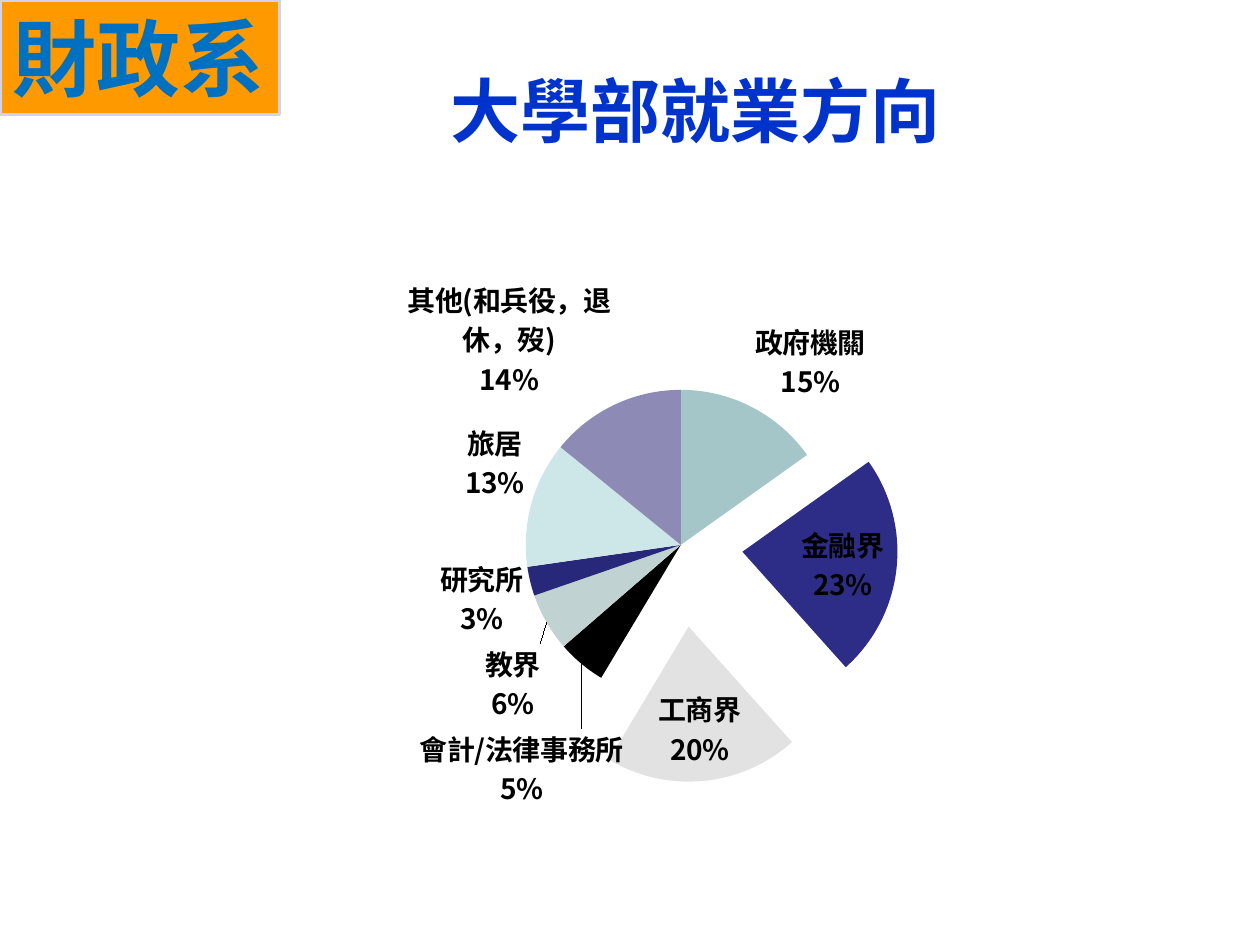
from lxml.etree import SubElement
from pptx import Presentation
from pptx.chart.data import CategoryChartData
from pptx.dml.color import RGBColor
from pptx.enum.chart import XL_CHART_TYPE as ChartType
from pptx.enum.shapes import MSO_SHAPE as Shape
from pptx.enum.text import MSO_ANCHOR as Anchor, MSO_AUTO_SIZE as AutoSize, PP_ALIGN as Align
from pptx.oxml import parse_xml
from pptx.oxml.ns import nsdecls, qn
from pptx.util import Cm, Pt

TITLE_BLUE = RGBColor(0x00, 0x33, 0xCC)
TAG_BLUE = RGBColor(0x00, 0x70, 0xC0)
ORANGE = RGBColor(0xFF, 0x99, 0x00)
LAVENDER = RGBColor(0xD1, 0xD1, 0xF0)
BLACK = RGBColor(0x00, 0x00, 0x00)
CJK_FONT = "Noto Sans CJK SC"

CAREERS = [
    ("政府機關", 15, RGBColor(0xA5, 0xC6, 0xC9)),
    ("金融界", 23, RGBColor(0x2D, 0x2D, 0x87)),
    ("工商界", 20, RGBColor(0xE2, 0xE2, 0xE2)),
    ("會計/法律事務所", 5, BLACK),
    ("教界", 6, RGBColor(0xC1, 0xD2, 0xD3)),
    ("研究所", 3, RGBColor(0x28, 0x28, 0x7A)),
    ("旅居", 13, RGBColor(0xCD, 0xE7, 0xE8)),
    ("其他(和兵役，退休，歿)", 14, RGBColor(0x8D, 0x8B, 0xB5)),
]
EXPLOSIONS = {1: 40, 2: 53}
LABEL_SHIFTS = {3: (0.04, 0.09)}


def format_para(para, text, size, color, font_name):
    para.text = text
    font = para.font
    font.size = Pt(size)
    font.bold = True
    font.color.rgb = color
    font.name = font_name
    defaults = para._p.pPr.find(qn("a:defRPr"))
    SubElement(defaults, qn("a:ea")).set("typeface", CJK_FONT)


deck = Presentation()
deck.slide_width, deck.slide_height = Cm(25.4), Cm(19.05)
page = deck.slides.add_slide(deck.slide_layouts[5])

title = page.shapes.title
title.left, title.top, title.width, title.height = Cm(7.9), Cm(1.12), Cm(12.24), Cm(2.16)
title.text_frame.vertical_anchor = Anchor.MIDDLE
title.text_frame.word_wrap = True
title_para = title.text_frame.paragraphs[0]
title_para.alignment = Align.CENTER
format_para(title_para, "大學部就業方向", 40, TITLE_BLUE, CJK_FONT)

career_data = CategoryChartData()
career_data.categories = [name for name, share, color in CAREERS]
career_data.add_series("Series 1", [share for name, share, color in CAREERS])
chart_frame = page.shapes.add_chart(
    ChartType.PIE, Cm(1.3), Cm(4.52), Cm(23.62), Cm(13.28), career_data
)
chart = chart_frame.chart
chart.has_title = False
chart.has_legend = False
chart.font.size = Pt(10)
chart.font.name = "Arial"
chart.font.color.rgb = BLACK

pie = chart.plots[0]
pie.vary_by_categories = True
series = pie.series[0]
for index, (name, share, color) in enumerate(CAREERS):
    point = series.points[index]
    point.format.fill.solid()
    point.format.fill.fore_color.rgb = color
    point.format.line.fill.background()
    if index in EXPLOSIONS:
        explosion = parse_xml(f'<c:explosion {nsdecls("c")} val="{EXPLOSIONS[index]}"/>')
        for data_point in series._element.findall(qn("c:dPt")):
            if data_point.find(qn("c:idx")).get("val") == str(index):
                data_point.find(qn("c:spPr")).addprevious(explosion)

label_settings = (
    '<c:spPr><a:noFill/><a:ln><a:noFill/></a:ln></c:spPr>'
    '<c:txPr><a:bodyPr/><a:p><a:pPr><a:defRPr sz="1600" b="1">'
    f'<a:solidFill><a:srgbClr val="{BLACK}"/></a:solidFill>'
    f'<a:latin typeface="{CJK_FONT}"/>'
    '</a:defRPr></a:pPr><a:endParaRPr lang="zh-TW"/></a:p></c:txPr>'
    '<c:dLblPos val="bestFit"/><c:showLegendKey val="0"/>'
    '<c:showVal val="0"/><c:showCatName val="1"/><c:showSerName val="0"/>'
    '<c:showPercent val="1"/><c:showBubbleSize val="0"/>'
    '<c:separator>\n</c:separator>'
)
shifted_labels = ""
for index, (shift_x, shift_y) in LABEL_SHIFTS.items():
    shifted_labels += (
        f'<c:dLbl><c:idx val="{index}"/><c:layout><c:manualLayout>'
        f'<c:x val="{shift_x}"/><c:y val="{shift_y}"/>'
        f'</c:manualLayout></c:layout>{label_settings}</c:dLbl>'
    )
labels = parse_xml(
    f'<c:dLbls {nsdecls("c", "a")}>{shifted_labels}{label_settings}'
    '<c:showLeaderLines val="1"/></c:dLbls>'
)
series._element.find(qn("c:cat")).addprevious(labels)

plot_area = chart._chartSpace.chart.plotArea
for old_layout in plot_area.findall(qn("c:layout")):
    plot_area.remove(old_layout)
pie_left, pie_top, pie_size = Cm(9.3), Cm(3.34), Cm(6.25)
plot_area.insert(0, parse_xml(
    f'<c:layout {nsdecls("c")}><c:manualLayout><c:layoutTarget val="inner"/>'
    '<c:xMode val="edge"/><c:yMode val="edge"/>'
    f'<c:x val="{pie_left / chart_frame.width}"/><c:y val="{pie_top / chart_frame.height}"/>'
    f'<c:w val="{pie_size / chart_frame.width}"/><c:h val="{pie_size / chart_frame.height}"/>'
    '</c:manualLayout></c:layout>'
))

tag = page.shapes.add_shape(Shape.RECTANGLE, Cm(0), Cm(0), Cm(5.64), Cm(2.31))
tag.shadow.inherit = False
tag.fill.solid()
tag.fill.fore_color.rgb = ORANGE
tag.line.color.rgb = LAVENDER
tag.line.width = Pt(2)
tag.text_frame.word_wrap = False
tag.text_frame.auto_size = AutoSize.SHAPE_TO_FIT_TEXT
tag.text_frame.vertical_anchor = Anchor.TOP
tag_para = tag.text_frame.paragraphs[0]
tag_para.alignment = Align.LEFT
format_para(tag_para, "財政系", 48, TAG_BLUE, "Arial")

deck.save("out.pptx")
